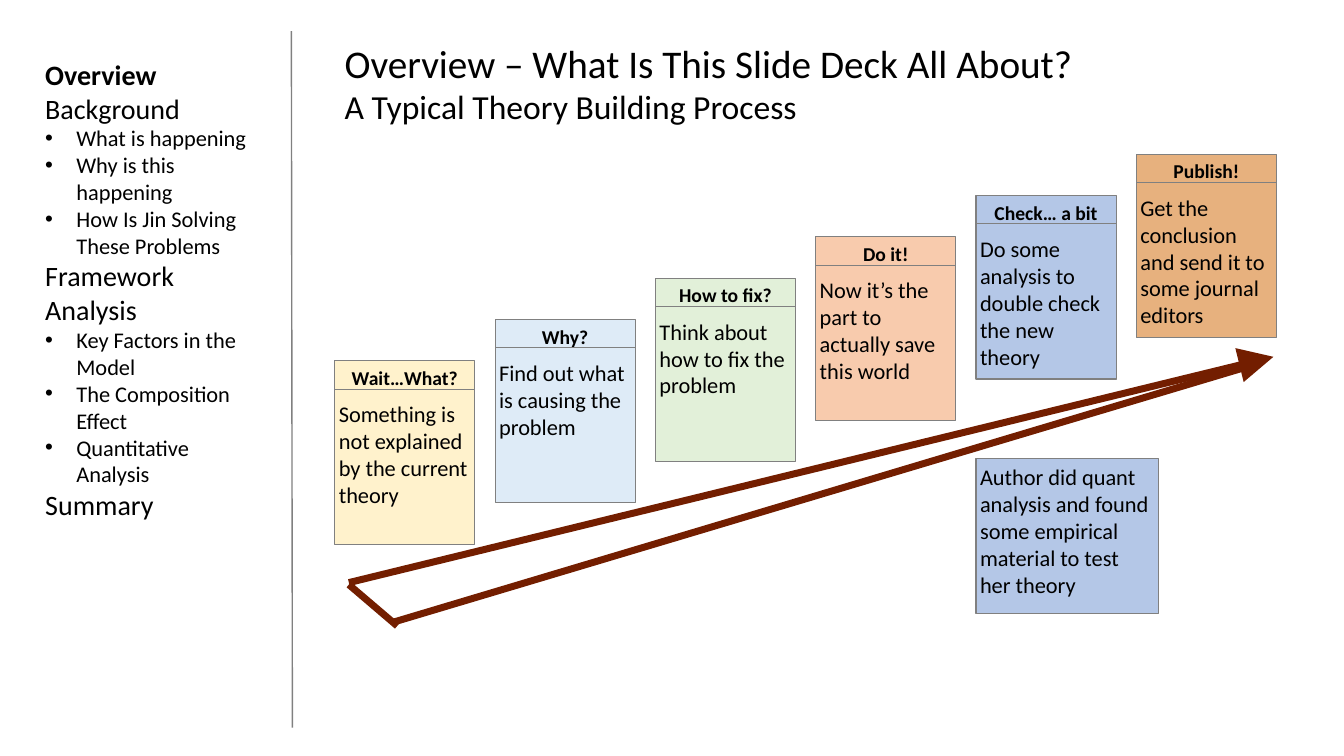
from lxml.etree import SubElement
from pptx import Presentation
from pptx.dml.color import RGBColor
from pptx.enum.shapes import MSO_CONNECTOR, MSO_SHAPE
from pptx.enum.text import MSO_ANCHOR, PP_ALIGN
from pptx.oxml.ns import qn
from pptx.util import Inches, Pt

BLACK = RGBColor(0, 0, 0)
GRAY = RGBColor(0x80, 0x80, 0x80)
BROWN = RGBColor(0x73, 0x1E, 0x00)
YELLOW = RGBColor(0xFF, 0xF2, 0xCC)
PALE = RGBColor(0xDE, 0xEB, 0xF7)
GREEN = RGBColor(0xE2, 0xF0, 0xD9)
PEACH = RGBColor(0xF8, 0xCB, 0xAD)
BLUE = RGBColor(0xB4, 0xC7, 0xE7)
ORANGE = RGBColor(0xE7, 0xB1, 0x7E)

# Grid: cards climb one step right and one rise up at a time
LEFT, BASE = 3.32, 3.58
STEP, RISE = 1.59, 0.41
WIDE, HIGH, HEAD = 1.39, 1.82, 0.28

deck = Presentation()
deck.slide_width, deck.slide_height = Inches(13.33), Inches(7.5)
slide = deck.slides.add_slide(deck.slide_layouts[6])
shapes = slide.shapes


def write(frame, text, size=16, bold=False, align=PP_ALIGN.LEFT, gap=0, bullet=False):
    """Put text in the empty first paragraph, or in a new one."""
    para = frame.paragraphs[0]
    if para.runs:
        para = frame.add_paragraph()
    para.alignment = align
    para.space_before = Pt(gap)
    run = para.add_run()
    run.text = text
    run.font.name = "Calibri"
    run.font.size = Pt(size)
    run.font.bold = bold
    run.font.color.rgb = BLACK
    if bullet:
        props = para._p.get_or_add_pPr()
        props.set("marL", str(Inches(0.31)))
        props.set("indent", str(-Inches(0.31)))
        SubElement(props, qn("a:buFont")).set("typeface", "Arial")
        SubElement(props, qn("a:buChar")).set("char", "•")


def draw(start, end, color=GRAY, width=0.75, arrow=False):
    """Draw a straight line between two points given in inches."""
    ends = [Inches(n) for n in (*start, *end)]
    line = shapes.add_connector(MSO_CONNECTOR.STRAIGHT, *ends)
    line.line.color.rgb = color
    line.line.width = Pt(width)
    props = line._element.spPr
    SubElement(props, qn("a:effectLst"))
    if arrow:
        tip = SubElement(props.find(qn("a:ln")), qn("a:tailEnd"))
        for key, value in (("type", "triangle"), ("w", "lg"), ("len", "lg")):
            tip.set(key, value)


# Divider, title and outline
draw((2.89, 0.31), (2.9, 7.22), width=1)

title = shapes.add_textbox(Inches(LEFT), Inches(0.34), Inches(9.35), Inches(0.98)).text_frame
title.word_wrap = True
write(title, "Overview – What Is This Slide Deck All About?", size=28)
write(title, "A Typical Theory Building Process", size=24)

outline = [
    ("Overview", []),
    ("Background", ["What is happening", "Why is this happening",
                    "How Is Jin Solving These Problems"]),
    ("Framework", []),
    ("Analysis", ["Key Factors in the Model", "The Composition Effect",
                  "Quantitative Analysis"]),
    ("Summary", []),
]
menu = shapes.add_textbox(Inches(0.35), Inches(0.52), Inches(2.37), Inches(5.55)).text_frame
menu.word_wrap = True
for topic, points in outline:
    write(menu, topic, size=20, bold=topic == "Overview")
    for point in points:
        write(menu, point, bullet=True)

# Long rising arrow
draw((3.46, 5.78), (12.63, 3.54), BROWN, 5, arrow=True)
draw((3.91, 6.17), (12.5, 3.6), BROWN, 5)
draw((3.46, 5.8), (3.94, 6.21), BROWN, 5)

# Cards: column, top, width, height, fill, heading, body
stages = [
    (YELLOW, "Wait…What?", "Something is not explained by the current theory"),
    (PALE, "Why?", "Find out what is causing the problem"),
    (GREEN, "How to fix?", "Think about how to fix the problem"),
    (PEACH, "Do it!", "Now it’s the part to actually save this world"),
    (BLUE, "Check… a bit", "Do some analysis to double check the new theory"),
    (ORANGE, "Publish!", "Get the conclusion and send it to some journal editors"),
]
cards = [(col, BASE - col * RISE, WIDE, HIGH, *stage) for col, stage in enumerate(stages)]
cards.append((4, 4.55, 1.81, 1.54, BLUE, "",
              "Author did quant analysis and found some empirical material to test her theory"))

for col, top, wide, high, fill, head, body in cards:
    left = LEFT + col * STEP
    card = shapes.add_shape(MSO_SHAPE.RECTANGLE, Inches(left), Inches(top),
                            Inches(wide), Inches(high))
    card.shadow.inherit = False
    card.fill.solid()
    card.fill.fore_color.rgb = fill
    card.line.color.rgb = GRAY
    card.line.width = Pt(0.75)
    frame = card.text_frame
    frame.word_wrap = True
    frame.vertical_anchor = MSO_ANCHOR.TOP
    frame.margin_left = frame.margin_right = Inches(0.04)
    if head:
        write(frame, head, size=14, bold=True, align=PP_ALIGN.CENTER)
        draw((left, top + HEAD), (left + wide, top + HEAD))
    write(frame, body, gap=8 if head else 0)

deck.save("out.pptx")
